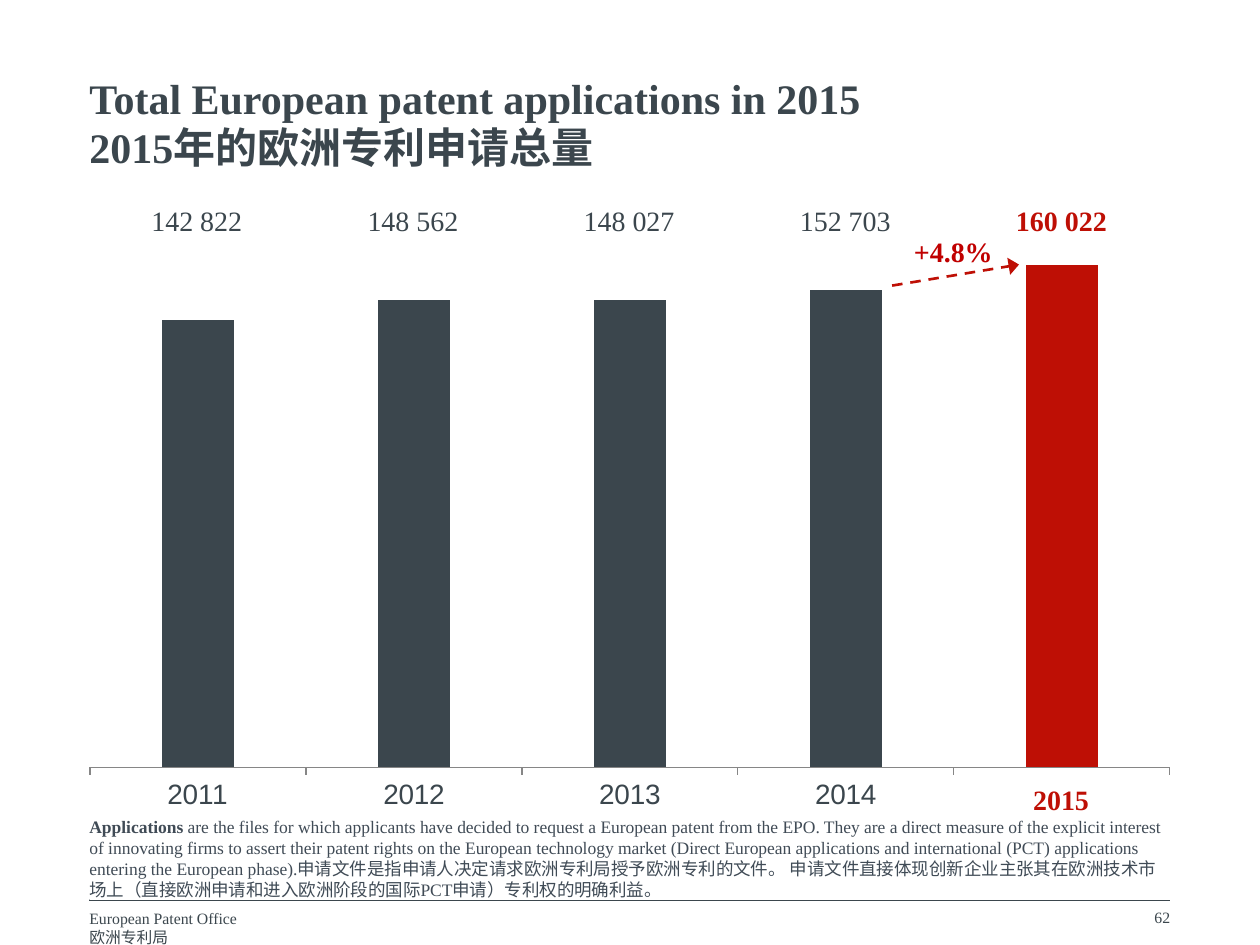
from lxml.etree import SubElement
from pptx import Presentation
from pptx.chart.data import CategoryChartData
from pptx.dml.color import RGBColor
from pptx.enum.chart import XL_CHART_TYPE as ChartType, XL_TICK_MARK as Tick
from pptx.enum.dml import MSO_LINE as Dash
from pptx.enum.shapes import MSO_CONNECTOR as Connector, MSO_SHAPE as Shape
from pptx.enum.text import MSO_ANCHOR as Anchor, PP_ALIGN as Align
from pptx.oxml.ns import qn
from pptx.util import Pt

THEME = {
    "slate": RGBColor.from_string("3B464D"),
    "note": RGBColor.from_string("404B56"),
    "red": RGBColor.from_string("BE0F05"),
    "growth": RGBColor.from_string("C00000"),
    "axis": RGBColor.from_string("868686"),
    "white": RGBColor.from_string("FFFFFF"),
    "serif": "Times New Roman",
    "sans": "Arial",
    "title": 24,
    "label": 16,
    "body": 10,
    "small": 9,
}

TITLE = ["Total European patent applications in 2015", "2015年的欧洲专利申请总量"]
OFFICE = ["European Patent Office", "欧洲专利局"]
PAGE = "62"
APPLICATIONS = [
    ("2011", 142822),
    ("2012", 148562),
    ("2013", 148027),
    ("2014", 152703),
    ("2015", 160022),
]
GROWTH = "+4.8%"
NOTE = [
    ("Applications ", True),
    ("are the files for which applicants have decided to request a European patent from the EPO. "
     "They are a direct measure of the explicit interest of innovating firms to assert their patent "
     "rights on the European technology market (Direct European applications and international (PCT) "
     "applications entering the European phase).申请文件是指申请人决定请求欧洲专利局授予欧洲专利的文件。 "
     "申请文件直接体现创新企业主张其在欧洲技术市场上（直接欧洲申请和进入欧洲阶段的国际PCT申请）"
     "专利权的明确利益。", False),
]

LEFT, RIGHT = 51.1, 668.7
WIDTH = RIGHT - LEFT
COLUMN = WIDTH / len(APPLICATIONS)
PLOT = {"x": 0, "y": 0.013, "w": 1, "h": 0.869}


def write(shape, paragraphs, size, color="slate", align=Align.LEFT, spacing=None, before=None, wrap=True):
    """Fill a shape with paragraphs, each a list of (text, bold) runs."""
    frame = shape.text_frame
    frame.word_wrap = wrap
    frame.margin_left = frame.margin_right = frame.margin_top = frame.margin_bottom = 0
    for index, runs in enumerate(paragraphs):
        paragraph = frame.add_paragraph() if index else frame.paragraphs[0]
        paragraph.alignment = align
        if spacing:
            paragraph.line_spacing = Pt(spacing)
        if before:
            paragraph.space_before = Pt(before)
        for text, bold in runs:
            run = paragraph.add_run()
            run.text = text
            run.font.name = THEME["serif"]
            run.font.size = Pt(THEME[size])
            run.font.bold = bold
            run.font.color.rgb = THEME[color]
    return frame


def add_text(slide, box, lines, size, bold=False, **style):
    """Add a text box with one run per line."""
    shape = slide.shapes.add_textbox(*map(Pt, box))
    write(shape, [[(line, bold)] for line in lines], size, **style)


def add_label(slide, center, top, text, color, bold):
    """Add a one-line label centred on a horizontal position."""
    add_text(slide, (center - 26, top, 52, 19), [text], "label", bold,
             color=color, align=Align.CENTER, wrap=False)


def add_line(slide, start, end, color, width):
    """Add a straight line without a shadow."""
    line = slide.shapes.add_connector(Connector.STRAIGHT, *map(Pt, start + end))
    line.line.color.rgb = THEME[color]
    line.line.width = Pt(width)
    SubElement(line._element.spPr, qn("a:effectLst"))
    return line


def add_growth_arrow(slide):
    """Add the dashed arrow between the last two columns."""
    arrow = add_line(slide, (509.8, 163.2), (582.3, 151.2), "red", 1.5)
    arrow.line.dash_style = Dash.DASH
    SubElement(arrow.line._get_or_add_ln(), qn("a:tailEnd"), type="triangle", w="lg", len="med")


def add_note(slide):
    """Add the definition on its white panel."""
    panel = slide.shapes.add_shape(Shape.RECTANGLE, Pt(LEFT), Pt(466.2), Pt(WIDTH), Pt(48))
    panel.shadow.inherit = False
    panel.fill.solid()
    panel.fill.fore_color.rgb = THEME["white"]
    panel.line.fill.background()
    frame = write(panel, [NOTE], "body", color="note", before=2)
    frame.vertical_anchor = Anchor.BOTTOM


def add_columns(slide):
    """Add the chart of applications indexed to the latest year."""
    latest = APPLICATIONS[-1][1]
    shares = [round(100 * count / latest) for _, count in APPLICATIONS]
    shares[2] = shares[1]
    data = CategoryChartData(number_format="#,##0")
    data.categories = [year for year, _ in APPLICATIONS[:-1]] + [""]
    data.add_series("Series 1", shares[:-1] + [None])
    data.add_series("Series 2", [None] * (len(shares) - 1) + shares[-1:])
    chart = slide.shapes.add_chart(
        ChartType.COLUMN_STACKED, Pt(LEFT), Pt(138.2), Pt(WIDTH), Pt(340.6), data).chart
    chart.has_legend = chart.has_title = False
    chart.font.name = THEME["sans"]
    chart.font.size = Pt(18)
    chart.font.color.rgb = THEME["slate"]

    plot = chart.plots[0]
    plot.vary_by_categories = False
    plot.gap_width, plot.overlap = 200, 100
    for series, color in zip(plot.series, ("slate", "red")):
        series.format.fill.solid()
        series.format.fill.fore_color.rgb = THEME[color]

    values = chart.value_axis
    values.minimum_scale, values.maximum_scale = 0, 103
    values.has_major_gridlines = values.visible = False
    years = chart.category_axis
    years.major_tick_mark = Tick.OUTSIDE
    years.tick_labels.font.size = Pt(THEME["label"])
    years.format.line.color.rgb = THEME["axis"]

    area = chart._chartSpace.chart.plotArea
    for old in area.findall(qn("c:layout")):
        area.remove(old)
    layout = SubElement(area, qn("c:layout"))
    area.insert(0, layout)
    manual = SubElement(layout, qn("c:manualLayout"))
    settings = {"layoutTarget": "inner", "xMode": "edge", "yMode": "edge", **PLOT}
    for name, value in settings.items():
        SubElement(manual, qn(f"c:{name}"), val=str(value))


def main():
    """Build the slide and save it."""
    presentation = Presentation()
    presentation.slide_width, presentation.slide_height = Pt(720), Pt(540)
    slide = presentation.slides.add_slide(presentation.slide_layouts[6])

    add_line(slide, (LEFT, 514.3), (RIGHT, 514.3), "slate", 0.75)
    add_text(slide, (LEFT, 519.3, 122, 18), OFFICE, "small")
    add_text(slide, (LEFT, 42.5, WIDTH, 42.5), TITLE, "title", True, spacing=27.8)
    add_text(slide, (RIGHT - 142, 518.7, 142, 17), [PAGE], "small", align=Align.RIGHT)
    add_note(slide)
    add_columns(slide)

    for index, (year, count) in enumerate(APPLICATIONS):
        center = LEFT + COLUMN * (index + 0.5)
        last = index == len(APPLICATIONS) - 1
        color = "red" if last else "slate"
        add_label(slide, center - 0.4, 116.4, f"{count:,}".replace(",", " "), color, last)
        if last:
            add_label(slide, center - 0.6, 447, year, color, True)
    add_label(slide, 544.8, 134, GROWTH, "growth", True)
    add_growth_arrow(slide)
    presentation.save("out.pptx")


if __name__ == "__main__":
    main()
